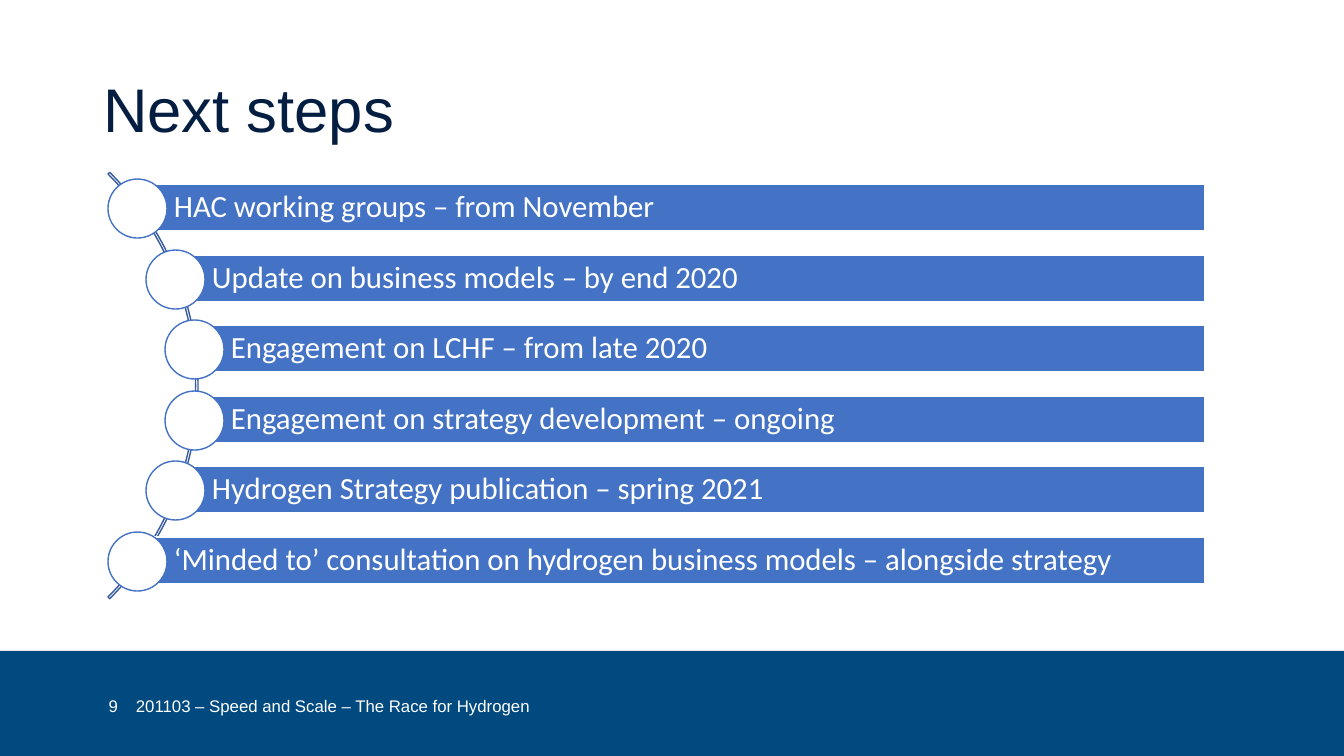
import pptx
import pptx.dml.color
import pptx.enum.shapes
import pptx.enum.text
import pptx.util

SHAPE = pptx.enum.shapes.MSO_SHAPE
ALIGN = pptx.enum.text.PP_ALIGN
MIDDLE = pptx.enum.text.MSO_ANCHOR.MIDDLE
WIDTH, HEIGHT = 1344, 756
EMU_PER_PX = 12192000 / WIDTH

STEPS = [
    (137, "HAC working groups – from November"),
    (175, "Update on business models – by end 2020"),
    (194, "Engagement on LCHF – from late 2020"),
    (194, "Engagement on strategy development – ongoing"),
    (175, "Hydrogen Strategy publication – spring 2021"),
    (137, "‘Minded to’ consultation on hydrogen business models – alongside strategy"),
]
FIRST_CENTRE, STEP_PITCH = 208, 70.6
BAR_RIGHT, BAR_HEIGHT, MARKER_SIZE = 1205, 47, 59


def px(length):
    """Turn a length in px into EMU."""
    return pptx.util.Emu(round(length * EMU_PER_PX))


def colour(hex_string):
    """Turn a hex string into a colour."""
    return pptx.dml.color.RGBColor.from_string(hex_string)


class SlideBuilder:
    """Hold the style and the current slide."""

    NAVY, BAND, BLUE, ARC, WHITE = "041E42", "004A7F", "4472C4", "365B9D", "FFFFFF"
    HEADING_FONT, STEP_FONT = "Arial", "Calibri"

    def __init__(self, presentation):
        """Add a title-only slide."""
        self.slide = presentation.slides.add_slide(presentation.slide_layouts[5])

    def label(self, shape, text, size, font, ink, align=ALIGN.LEFT, spacing=1.0):
        """Set one formatted line in a shape."""
        frame = shape.text_frame
        frame.text = text
        frame.word_wrap = True
        frame.auto_size = pptx.enum.text.MSO_AUTO_SIZE.NONE
        frame.vertical_anchor = MIDDLE
        paragraph = frame.paragraphs[0]
        paragraph.alignment = align
        paragraph.line_spacing = spacing
        for run in paragraph.runs:
            run.font.size = pptx.util.Pt(size)
            run.font.name = font
            run.font.color.rgb = colour(ink)

    def title(self, text, left, top, width, height):
        """Place and format the title placeholder."""
        heading = self.slide.shapes.title
        heading.left, heading.top = px(left), px(top)
        heading.width, heading.height = px(width), px(height)
        self.label(heading, text, 44, self.HEADING_FONT, self.NAVY, spacing=0.9)

    def shape(self, kind, left, top, width, height, fill=None, line=None):
        """Add a preset shape with an optional fill and outline."""
        shape = self.slide.shapes.add_shape(kind, px(left), px(top), px(width), px(height))
        shape.shadow.inherit = False
        if fill:
            shape.fill.solid()
            shape.fill.fore_color.rgb = colour(fill)
        else:
            shape.fill.background()
        if line:
            shape.line.color.rgb = colour(line)
            shape.line.width = pptx.util.Pt(1)
        else:
            shape.line.fill.background()
        return shape

    def arc(self, left, top, size):
        """Add the thin arc that links the step markers."""
        arc = self.shape(SHAPE.BLOCK_ARC, left, top, size, size, line=self.ARC)
        for index, value in enumerate((189, 27, 0.004)):
            arc.adjustments[index] = value

    def step(self, left, centre, text):
        """Add a step bar with its round marker."""
        bar = self.shape(SHAPE.RECTANGLE, left, centre - BAR_HEIGHT // 2 - 1,
                         BAR_RIGHT - left, BAR_HEIGHT, self.BLUE, self.WHITE)
        self.label(bar, text, 22, self.STEP_FONT, self.WHITE, spacing=0.9)
        frame = bar.text_frame
        frame.margin_left = px(37)
        frame.margin_top = frame.margin_right = frame.margin_bottom = px(6)
        radius = MARKER_SIZE // 2
        self.shape(SHAPE.OVAL, left - radius, centre - radius,
                   MARKER_SIZE, MARKER_SIZE, self.WHITE, self.BLUE)

    def footer(self, text, left, width, align):
        """Add a text in the footer band."""
        box = self.slide.shapes.add_textbox(px(left), px(686), px(width), px(40))
        self.label(box, text, 12, self.HEADING_FONT, self.WHITE, align)


def main():
    """Build and save the slide."""
    presentation = pptx.Presentation()
    presentation.slide_width, presentation.slide_height = px(WIDTH), px(HEIGHT)
    builder = SlideBuilder(presentation)
    builder.shape(SHAPE.RECTANGLE, 0, 651, WIDTH, 105, builder.BAND)
    builder.title("Next steps", 93, 40, 1159, 146)
    builder.arc(-405, 84, 603)
    for index, (left, text) in enumerate(STEPS):
        builder.step(left, round(FIRST_CENTRE + index * STEP_PITCH), text)
    builder.footer("9", 73, 55, ALIGN.RIGHT)
    builder.footer("201103 – Speed and Scale – The Race for Hydrogen", 126, 454, ALIGN.LEFT)
    presentation.save("out.pptx")


if __name__ == "__main__":
    main()
